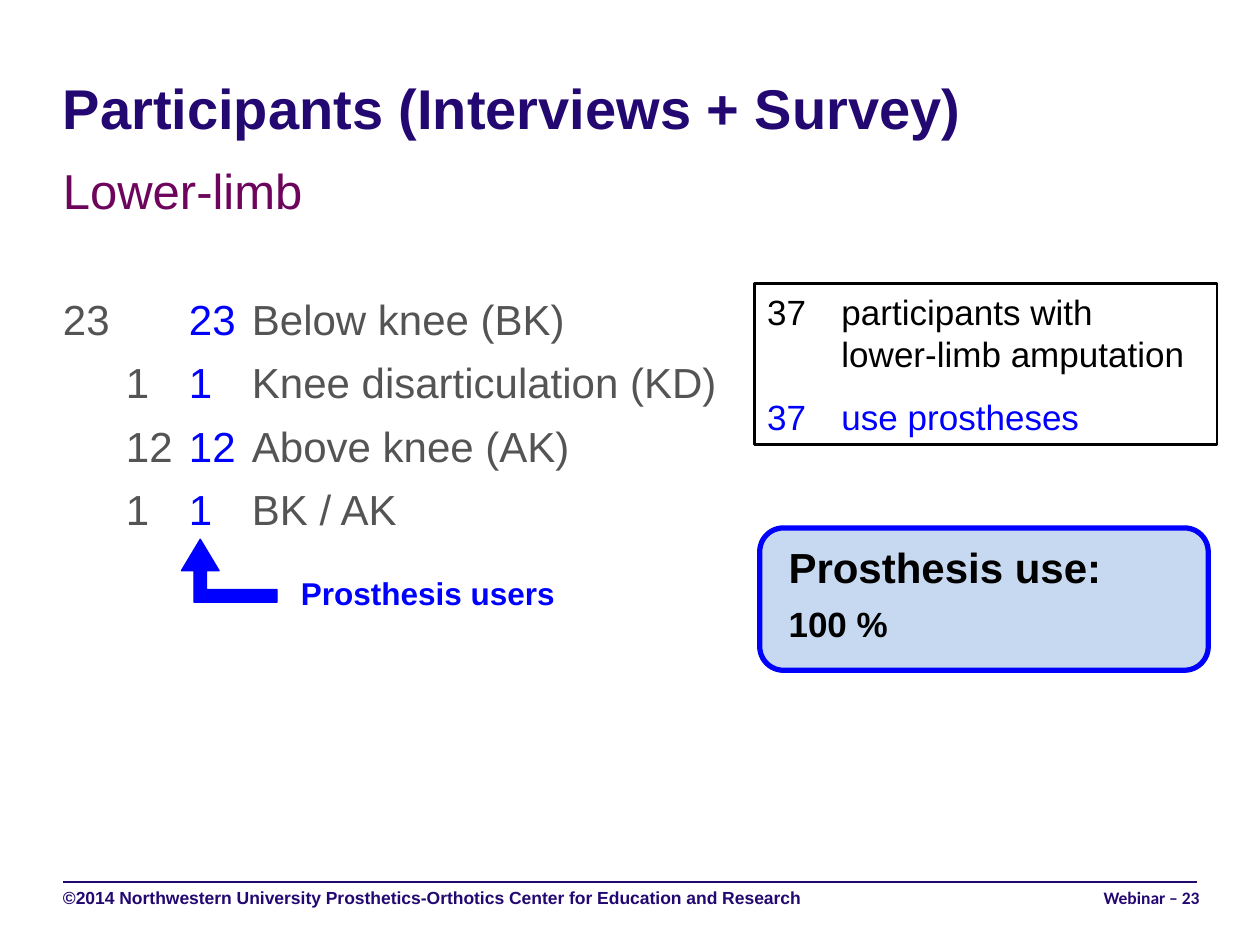
from dataclasses import dataclass
from lxml import etree
from pptx import Presentation
from pptx.dml.color import RGBColor
from pptx.enum.shapes import MSO_CONNECTOR, MSO_SHAPE as Shape
from pptx.enum.text import MSO_ANCHOR as Anchor, PP_ALIGN as Align
from pptx.oxml.ns import qn
from pptx.util import Inches, Pt

COLORS = {
    "navy": "230872", "plum": "6E055C", "gray": "545454",
    "blue": "0000FF", "black": "000000", "pale": "C6D9F1",
}
COLUMNS, ROWS = 100, 75


def rgb(name):
    return RGBColor.from_string(COLORS[name])


def write(paragraph, runs, size=20, color="black", bold=False, font="Arial",
          align=Align.LEFT, after=0, spacing=None, tabs=(), hanging=0):
    """Fill a paragraph; runs is a string or a list of (text, color) pairs."""
    props = paragraph._p.get_or_add_pPr()
    if hanging:
        props.set("marL", str(Inches(hanging)))
        props.set("indent", str(-Inches(hanging)))
    if tabs:
        tab_list = etree.SubElement(props, qn("a:tabLst"))
        for stop in tabs:
            etree.SubElement(tab_list, qn("a:tab"), pos=str(Inches(stop)), algn="l")
    paragraph.alignment = align
    paragraph.space_before, paragraph.space_after = Pt(0), Pt(after)
    if spacing:
        paragraph.line_spacing = spacing
    for text, run_color in [(runs, color)] if isinstance(runs, str) else runs:
        run = paragraph.add_run()
        run.text = text
        run.font.name, run.font.size, run.font.bold = font, Pt(size), bold
        run.font.color.rgb = rgb(run_color)


@dataclass
class Canvas:
    deck: object
    slide: object

    def box(self, left, top, width, height):
        """Turn grid columns and rows into slide lengths."""
        column = self.deck.slide_width / COLUMNS
        row = self.deck.slide_height / ROWS
        return (round(left * column), round(top * row),
                round(width * column), round(height * row))

    def fill_frame(self, frame, paragraphs, insets=(0.1, 0.05, 0.1, 0.05),
                   anchor=Anchor.TOP, wrap=True):
        frame.word_wrap, frame.vertical_anchor = wrap, anchor
        (frame.margin_left, frame.margin_top,
         frame.margin_right, frame.margin_bottom) = map(Inches, insets)
        for index, (runs, style) in enumerate(paragraphs):
            paragraph = frame.add_paragraph() if index else frame.paragraphs[0]
            write(paragraph, runs, **style)

    def text(self, area, paragraphs, **layout):
        label = self.slide.shapes.add_textbox(*self.box(*area))
        self.fill_frame(label.text_frame, paragraphs, **layout)

    def shape(self, kind, area, line, weight, fill=None):
        figure = self.slide.shapes.add_shape(kind, *self.box(*area))
        figure.shadow.inherit = False
        if fill:
            figure.fill.solid()
            figure.fill.fore_color.rgb = rgb(fill)
        else:
            figure.fill.background()
        figure.line.color.rgb, figure.line.width = rgb(line), Pt(weight)
        return figure

    def rule(self, left, right, row, color, weight):
        x, y, width, _ = self.box(left, row, right - left, 0)
        line = self.slide.shapes.add_connector(
            MSO_CONNECTOR.STRAIGHT, x, y, x + width, y)
        line.line.color.rgb, line.line.width = rgb(color), Pt(weight)
        etree.SubElement(line._element.spPr, qn("a:effectLst"))


def main():
    deck = Presentation()
    deck.slide_width, deck.slide_height = Inches(10), Inches(7.5)
    canvas = Canvas(deck, deck.slides.add_slide(deck.slide_layouts[6]))
    flush = (0, 0, 0, 0)

    # Footer rule and title
    canvas.rule(5, 95, 70, "navy", 1)
    canvas.text((5, 5.8, 90, 5.4), [
        ("Participants (Interviews + Survey)",
         dict(size=32, color="navy", bold=True)),
    ], insets=flush, anchor=Anchor.BOTTOM)

    # Amputation levels: participants, prosthesis users, level
    levels = [
        ("23\t\t", "23", "Below knee (BK)"),
        ("\t1\t", "1", "Knee disarticulation (KD)"),
        ("\t12\t", "12", "Above knee (AK)"),
        ("\t1\t", "1", "BK / AK"),
    ]
    level_style = dict(size=24, after=6, spacing=1.05, tabs=(0.5, 1, 1.5))
    canvas.text((5, 12.5, 90, 57.6), [
        ("Lower-limb", dict(size=28, color="plum", after=41, spacing=1.05)),
        *[([(count, "gray"), (users, "blue"), ("\t" + level, "gray")], level_style)
          for count, users, level in levels],
    ], insets=flush)

    # Arrow pointing at the column of users
    arrow = canvas.shape(Shape.BENT_UP_ARROW, (14.4, 42.8, 7.6, 5),
                         "blue", 0.75, "blue")
    for index, ratio in enumerate((0.2, 0.3, 0.5)):
        arrow.adjustments[index] = ratio
    arrow._element.spPr.find(qn("a:xfrm")).set("flipH", "1")
    canvas.text((22.9, 45.1, 22.4, 4), [
        ("Prosthesis users", dict(size=18, color="blue", bold=True)),
    ], wrap=False)

    # Totals
    totals = canvas.shape(Shape.RECTANGLE, (59.9, 22.5, 36.7, 12.8), "black", 1.5)
    canvas.fill_frame(totals.text_frame, [
        ("37\tparticipants with", dict(hanging=0.59)),
        ("\tlower-limb amputation", dict(hanging=0.59, after=12)),
        ("37\tuse prostheses", dict(hanging=0.59, color="blue")),
    ], anchor=Anchor.MIDDLE)

    # Share of prosthesis use
    canvas.shape(Shape.ROUNDED_RECTANGLE, (60.3, 41.9, 35.6, 11.3),
                 "blue", 3, "pale")
    canvas.text((61.6, 42.5, 35.2, 9.3), [
        ("Prosthesis use:", dict(size=24, bold=True, after=6)),
        ("100 %", dict(bold=True)),
    ])

    # Footer
    footer = dict(size=10, color="navy", bold=True)
    footer_insets = (0, 0.03, 0, 0)
    canvas.text((5, 70.1, 66.7, 4), [
        ("©2014 Northwestern University Prosthetics-Orthotics Center "
         "for Education and Research", footer),
    ], insets=footer_insets)
    canvas.text((71.9, 70.1, 23.3, 4), [
        ("Webinar – 23", dict(footer, font="Calibri", align=Align.RIGHT)),
    ], insets=footer_insets)

    deck.save("out.pptx")


if __name__ == "__main__":
    main()
